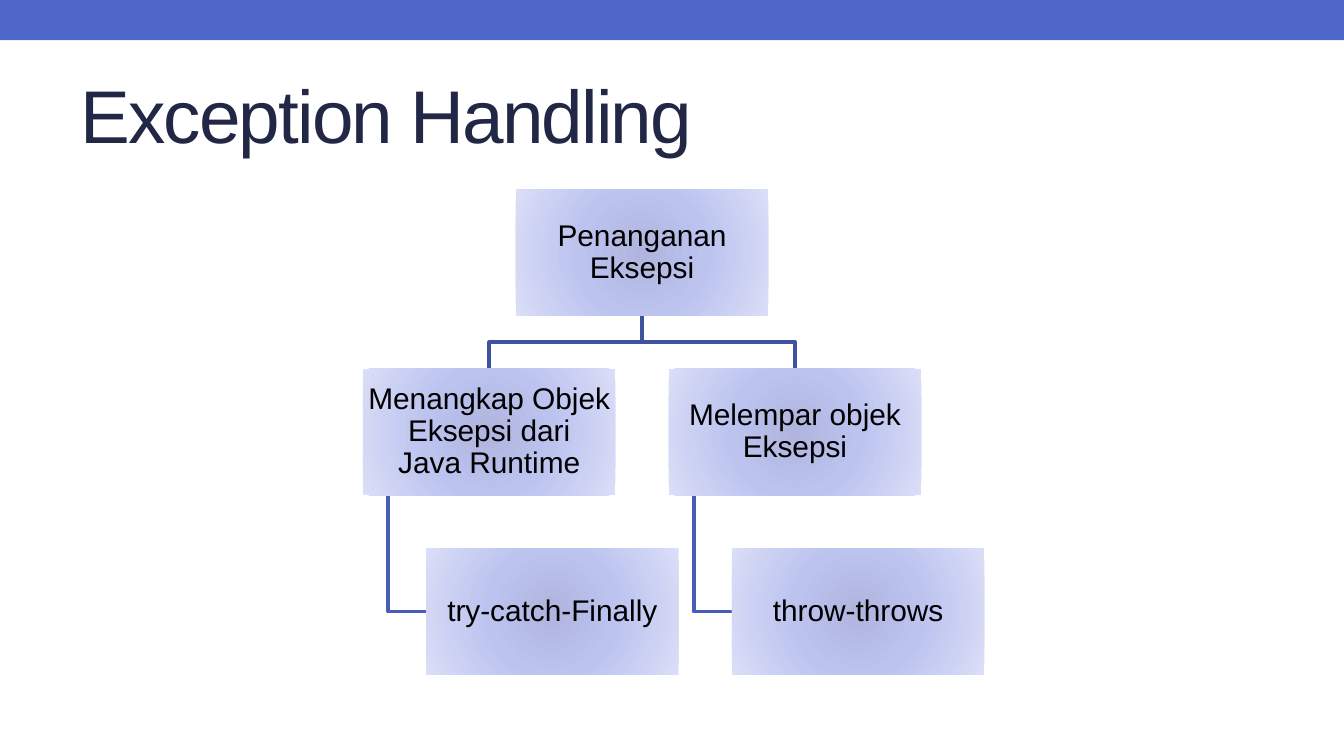
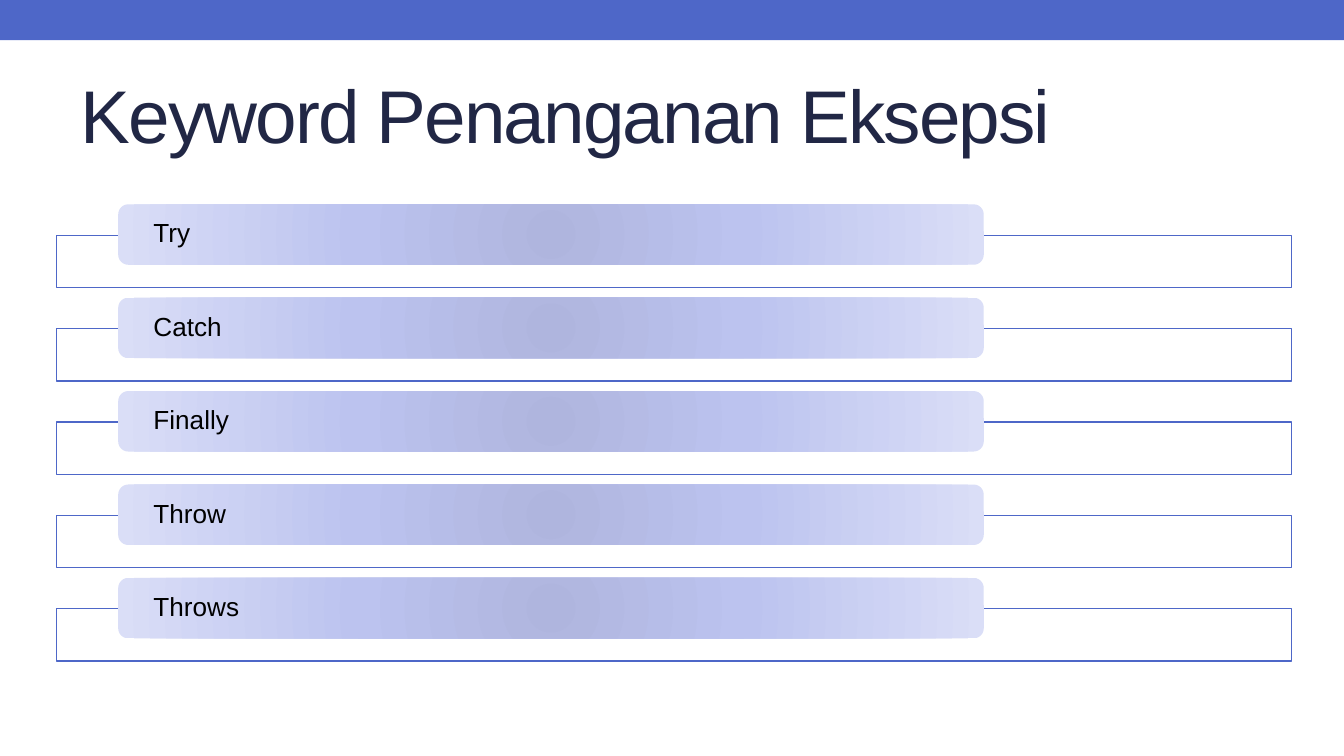
from copy import deepcopy
from lxml.etree import SubElement
from pptx import Presentation
from pptx.dml.color import RGBColor
from pptx.enum.shapes import MSO_SHAPE as SHAPE
from pptx.enum.text import MSO_ANCHOR as ANCHOR, PP_ALIGN as ALIGN
from pptx.oxml import parse_xml
from pptx.oxml.ns import nsdecls, qn
from pptx.util import Inches, Pt

W, H = 10, 5.625
BLUE, NAVY, BLACK, WHITE = "4E67C8", "212745", "000000", "FFFFFF"
GLOW = ((0, "AFB5DE"), (45, "BCC3EF"), (100, "DADEF7"))
rgb = RGBColor.from_string

prs = Presentation()
prs.slide_width, prs.slide_height = Inches(W), Inches(H)
layout = prs.slide_layouts[5]


def write(s, text, size=16, color=BLACK, align=ALIGN.CENTER, inset=0.01, spacing=0.9, track=None):
    tf = s.text_frame
    tf.word_wrap = True
    tf.vertical_anchor = ANCHOR.MIDDLE
    tf.margin_left = tf.margin_right = Inches(inset)
    p = tf.paragraphs[0]
    p.text, p.alignment, p.line_spacing = text, align, spacing
    for r in p.runs:
        r.font.name, r.font.size, r.font.color.rgb = "Arial", Pt(size), rgb(color)
        if track:
            r.font._element.set("spc", str(track * 100))
    for br in p._p.findall(qn("a:br")):
        br.append(deepcopy(p.runs[0].font._element))


def box(slide, kind, x, y, w, h, fill=GLOW, line=None):
    s = slide.shapes.add_shape(kind, Inches(x), Inches(y), Inches(w), Inches(h))
    s.shadow.inherit = False
    s.text_frame.margin_top = s.text_frame.margin_bottom = Inches(0.01)
    if fill == GLOW:
        s.fill.background()
        stops = "".join(f'<a:gs pos="{pos * 1000}"><a:srgbClr val="{c}"/></a:gs>' for pos, c in GLOW)
        grad = parse_xml(
            f'<a:gradFill {nsdecls("a")} rotWithShape="1"><a:gsLst>{stops}</a:gsLst><a:path path="circle">'
            '<a:fillToRect l="100000" t="100000" r="100000" b="100000"/></a:path></a:gradFill>')
        spPr = s._element.spPr
        spPr.replace(spPr.find(qn("a:noFill")), grad)
    else:
        s.fill.solid()
        s.fill.fore_color.rgb = rgb(fill)
    if line:
        s.line.color.rgb, s.line.width = rgb(line), Pt(0.75)
    else:
        s.line.fill.background()
    return s


slides = []
for title in ("Exception Handling", "Keyword Penanganan Eksepsi"):
    slide = prs.slides.add_slide(layout)
    s = slide.shapes.title
    s.left, s.top, s.width, s.height = Inches(0.05 * W), Inches(0.44), Inches(0.9 * W), Inches(0.81)
    write(s, title, size=40, color=NAVY, align=ALIGN.LEFT, inset=0.1, spacing=1, track=-1)
    slides.append(slide)
tree, keywords = slides

band = box(tree, SHAPE.RECTANGLE, 0, 0, W, 0.3, fill=BLUE)
layout.shapes._spTree.insert(2, band._element)

BOX_W, BOX_H = 1.88, 0.94
LEFT, TOP, COL, ROW = 2.7, 1.41, 2.275, 1.335
ROOT_X = LEFT + COL / 2
ROOT_MID = ROOT_X + BOX_W / 2
GAP = ROW - BOX_H
INDENT = BOX_W / 4
branches = (("Menangkap Objek Eksepsi dari\vJava Runtime", "try-catch-Finally"),
            ("Melempar objek Eksepsi", "throw-throws"))

nodes, elbows = [("Penanganan Eksepsi", ROOT_X, TOP)], []
for i, (parent, child) in enumerate(branches):
    x, y = LEFT + i * COL, TOP + ROW
    nodes += [(parent, x, y), (child, x + INDENT, y + ROW)]
    mid, bend, drop, end = x + BOX_W / 2, y - GAP / 2, x + BOX_W / 10, y + ROW + BOX_H / 2
    elbows += [("3E52A0", ((ROOT_MID, TOP + BOX_H), (ROOT_MID, bend), (mid, bend), (mid, y))),
               ("475DB6", ((drop, y + BOX_H), (drop, end), (x + INDENT, end)))]

for color, points in elbows:
    start, *rest = [(Inches(x), Inches(y)) for x, y in points]
    builder = tree.shapes.build_freeform(*start)
    builder.add_line_segments(rest, close=False)
    s = builder.convert_to_shape()
    s.shadow.inherit = False
    s.fill.background()
    s.line.color.rgb, s.line.width = rgb(color), Pt(2.08)

for text, x, y in nodes:
    write(box(tree, SHAPE.RECTANGLE, x, y, BOX_W, BOX_H), text)

for i, word in enumerate(("Try", "Catch", "Finally", "Throw", "Throws")):
    y = 1.52 + i * 0.695
    frame = box(keywords, SHAPE.RECTANGLE, 0.42, y + 0.23, 9.19, 0.39, fill=WHITE, line=BLUE)
    SubElement(frame._element.spPr.find(qn("a:solidFill"))[0], qn("a:alpha"), val="90000")
    pill = box(keywords, SHAPE.ROUNDED_RECTANGLE, 0.88, y, 6.44, 0.45)
    write(pill, word, size=14, align=ALIGN.LEFT, inset=0.24)

prs.save("out.pptx")
